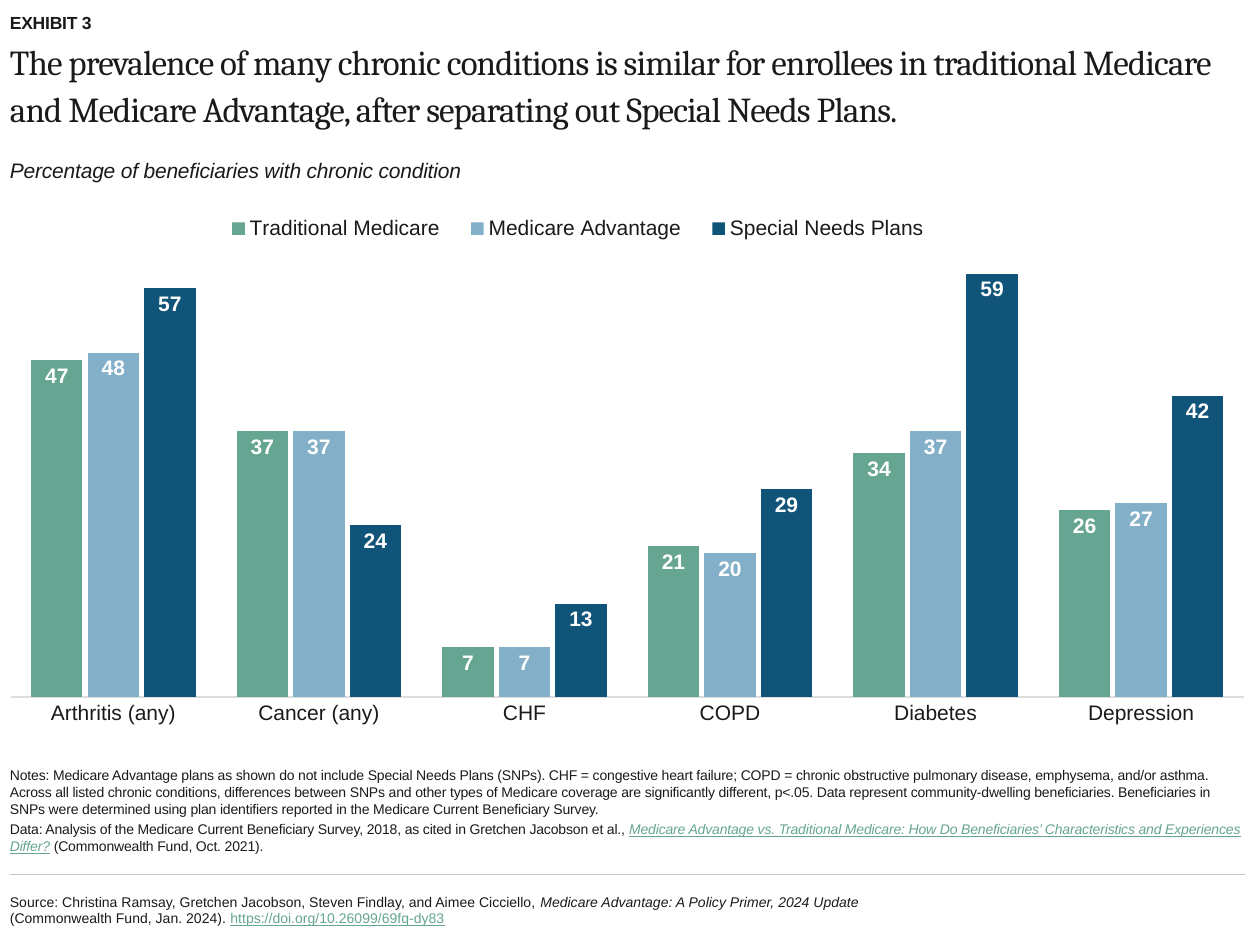
from lxml import etree
from pptx import Presentation
from pptx.chart.data import CategoryChartData
from pptx.dml.color import RGBColor
from pptx.enum.chart import XL_CHART_TYPE, XL_LABEL_POSITION, XL_LEGEND_POSITION, XL_TICK_MARK
from pptx.enum.shapes import MSO_CONNECTOR
from pptx.enum.text import MSO_ANCHOR, MSO_AUTO_SIZE, PP_ALIGN
from pptx.oxml import parse_xml
from pptx.oxml.ns import nsdecls, qn
from pptx.util import Cm, Pt

COLUMNS = XL_CHART_TYPE.COLUMN_CLUSTERED
INSIDE_END = XL_LABEL_POSITION.INSIDE_END
LEGEND_TOP = XL_LEGEND_POSITION.TOP
NO_TICK = XL_TICK_MARK.NONE
STRAIGHT = MSO_CONNECTOR.STRAIGHT
TOP, MIDDLE, BOTTOM = MSO_ANCHOR.TOP, MSO_ANCHOR.MIDDLE, MSO_ANCHOR.BOTTOM
NO_AUTOFIT = MSO_AUTO_SIZE.NONE
LEFT = PP_ALIGN.LEFT

INK = RGBColor(0x1A, 0x1A, 0x1A)
WHITE = RGBColor(0xFF, 0xFF, 0xFF)
GREEN = RGBColor(0x65, 0xA5, 0x91)
LIGHT_BLUE = RGBColor(0x83, 0xB0, 0xC8)
DARK_BLUE = RGBColor(0x11, 0x54, 0x79)
RULE_GRAY = RGBColor(0xC6, 0xC6, 0xC6)
AXIS_GRAY = RGBColor(0xDD, 0xDD, 0xDD)
SANS, SERIF = "Arial", "Cambria"

CONDITIONS = ["Arthritis (any)", "Cancer (any)", "CHF", "COPD", "Diabetes", "Depression"]
COVERAGE = [
    ("Traditional Medicare", GREEN, (47, 37, 7, 21, 34, 26)),
    ("Medicare Advantage", LIGHT_BLUE, (48, 37, 7, 20, 37, 27)),
    ("Special Needs Plans", DARK_BLUE, (57, 24, 13, 29, 59, 42)),
]


def style_font(font, size, color=INK, name=SANS, bold=False, italic=False):
    font.name = name
    font.size = Pt(size)
    font.bold = bold
    font.italic = italic
    font.color.rgb = color


def add_run(paragraph, text, size, spacing=0, underline=False, **style):
    run = paragraph.add_run()
    run.text = text
    style_font(run.font, size, **style)
    if underline:
        run.font.underline = True
    if spacing:
        run.font._element.set("spc", str(spacing))


def prepare_frame(shape, anchor):
    frame = shape.text_frame
    frame.word_wrap = True
    frame.auto_size = NO_AUTOFIT
    frame.vertical_anchor = anchor
    frame.margin_left = frame.margin_right = 0
    frame.margin_top = frame.margin_bottom = 0
    frame.paragraphs[0].alignment = LEFT
    return frame


def add_text_box(slide, left, top, width, height, anchor=TOP):
    box = slide.shapes.add_textbox(Cm(left), Cm(top), Cm(width), Cm(height))
    return prepare_frame(box, anchor)


def add_heading(slide, left, top, width):
    exhibit = add_text_box(slide, left, top, width, 0.53, BOTTOM)
    add_run(exhibit.paragraphs[0], "EXHIBIT 3", 10, spacing=-10, bold=True)

    title = slide.shapes.title
    title.left, title.top = Cm(left), Cm(top + 0.61)
    title.width, title.height = Cm(width), Cm(2.11)
    paragraph = prepare_frame(title, TOP).paragraphs[0]
    paragraph.line_spacing = 1.1
    add_run(paragraph, "The prevalence of many chronic conditions is similar for enrollees in "
            "traditional Medicare and Medicare Advantage, after separating out Special Needs Plans.",
            20, spacing=-50, name=SERIF)

    subtitle = add_text_box(slide, left, top + 3.05, width, 0.64)
    add_run(subtitle.paragraphs[0], "Percentage of beneficiaries with chronic condition",
            12, spacing=-10, italic=True)


def set_layout(parent, index, x, y, width, height, inner=False):
    for old in parent.findall(qn("c:layout")):
        parent.remove(old)
    layout = parse_xml(f"<c:layout {nsdecls('c')}><c:manualLayout/></c:layout>")
    values = [("layoutTarget", "inner")] if inner else []
    values += [("xMode", "edge"), ("yMode", "edge"), ("x", x), ("y", y), ("w", width), ("h", height)]
    for tag, value in values:
        etree.SubElement(layout[0], qn(f"c:{tag}")).set("val", str(value))
    parent.insert(index, layout)


def add_prevalence_chart(slide, left, top, width, height):
    data = CategoryChartData(number_format="0")
    data.categories = CONDITIONS
    for name, _, values in COVERAGE:
        data.add_series(name, values)
    frame = slide.shapes.add_chart(COLUMNS, Cm(left), Cm(top), Cm(width), Cm(height), data)
    chart = frame.chart
    style_font(chart.font, 10)
    chart.has_title = False

    chart.has_legend = True
    legend = chart.legend
    legend.position = LEGEND_TOP
    legend.include_in_layout = False
    style_font(legend.font, 12)
    set_layout(legend._element, 1, 0.16, 0.09, 0.6, 0.06)
    plot_area = chart._chartSpace.find(f".//{qn('c:plotArea')}")
    set_layout(plot_area, 0, 0, 0.184, 1, 0.729, inner=True)

    category_axis = chart.category_axis
    category_axis.major_tick_mark = category_axis.minor_tick_mark = NO_TICK
    category_axis.format.line.color.rgb = AXIS_GRAY
    category_axis.format.line.width = Pt(0.75)
    style_font(category_axis.tick_labels.font, 12)

    value_axis = chart.value_axis
    value_axis.minimum_scale, value_axis.maximum_scale = 0, 60
    value_axis.major_unit = 20
    value_axis.has_major_gridlines = False
    value_axis.visible = False

    plot = chart.plots[0]
    plot.gap_width, plot.overlap = 80, -10
    plot.vary_by_categories = False
    for series, (_, color, _) in zip(plot.series, COVERAGE):
        series.format.fill.solid()
        series.format.fill.fore_color.rgb = color
        series.invert_if_negative = False
        labels = series.data_labels
        labels.show_value = True
        labels.position = INSIDE_END
        labels.number_format = "0"
        labels.number_format_is_linked = False
        style_font(labels.font, 12, WHITE, bold=True)


def add_notes_text(slide, left, top, width, height):
    frame = add_text_box(slide, left, top, width, height, BOTTOM)
    notes, data = frame.paragraphs[0], frame.add_paragraph()
    for paragraph in (notes, data):
        paragraph.space_after = Pt(2)
    add_run(notes, "Notes: Medicare Advantage plans as shown do not include Special Needs Plans (SNPs). "
            "CHF = congestive heart failure; COPD = chronic obstructive pulmonary disease, emphysema, "
            "and/or asthma. Across all listed chronic conditions, differences between SNPs and other "
            "types of Medicare coverage are significantly different, p<.05. Data represent "
            "community-dwelling beneficiaries. Beneficiaries in SNPs were determined using plan "
            "identifiers reported in the Medicare Current Beneficiary Survey.", 8, spacing=-10)
    add_run(data, "Data: Analysis of the Medicare Current Beneficiary Survey, 2018, as cited in "
            "Gretchen Jacobson et al., ", 8, spacing=-10)
    add_run(data, "Medicare Advantage vs. Traditional Medicare: How Do Beneficiaries’ Characteristics "
            "and Experiences Differ?", 8, spacing=-10, underline=True, color=GREEN, italic=True)
    add_run(data, " (Commonwealth Fund, Oct. 2021).", 8, spacing=-10)


def add_source(slide, left, top, width):
    rule = slide.shapes.add_connector(STRAIGHT, Cm(left), Cm(top), Cm(left + width), Cm(top))
    rule.line.color.rgb = RULE_GRAY
    rule.line.width = Pt(0.75)
    etree.SubElement(rule._element.spPr, qn("a:effectLst"))

    paragraph = add_text_box(slide, left, top + 0.13, 17.48, 1.17, MIDDLE).paragraphs[0]
    add_run(paragraph, "Source: Christina Ramsay, Gretchen Jacobson, Steven Findlay, "
            "and Aimee Cicciello, ", 8)
    add_run(paragraph, "Medicare Advantage: A Policy Primer, 2024 Update ", 8, italic=True)
    add_run(paragraph, "(Commonwealth Fund, Jan. 2024). ", 8)
    add_run(paragraph, "https://doi.org/10.26099/69fq-dy83", 8, underline=True, color=GREEN)


def main():
    presentation = Presentation()
    presentation.slide_width, presentation.slide_height = Cm(25.4), Cm(19.05)
    slide = presentation.slides.add_slide(presentation.slide_layouts[5])
    left, width = 0.2, 24.89
    add_prevalence_chart(slide, left, 3.18, width, 11.91)
    add_heading(slide, left, 0.13, width)
    add_notes_text(slide, left, 15.95, width, 1.27)
    add_source(slide, left, 17.63, width)
    presentation.save("out.pptx")


if __name__ == "__main__":
    main()
